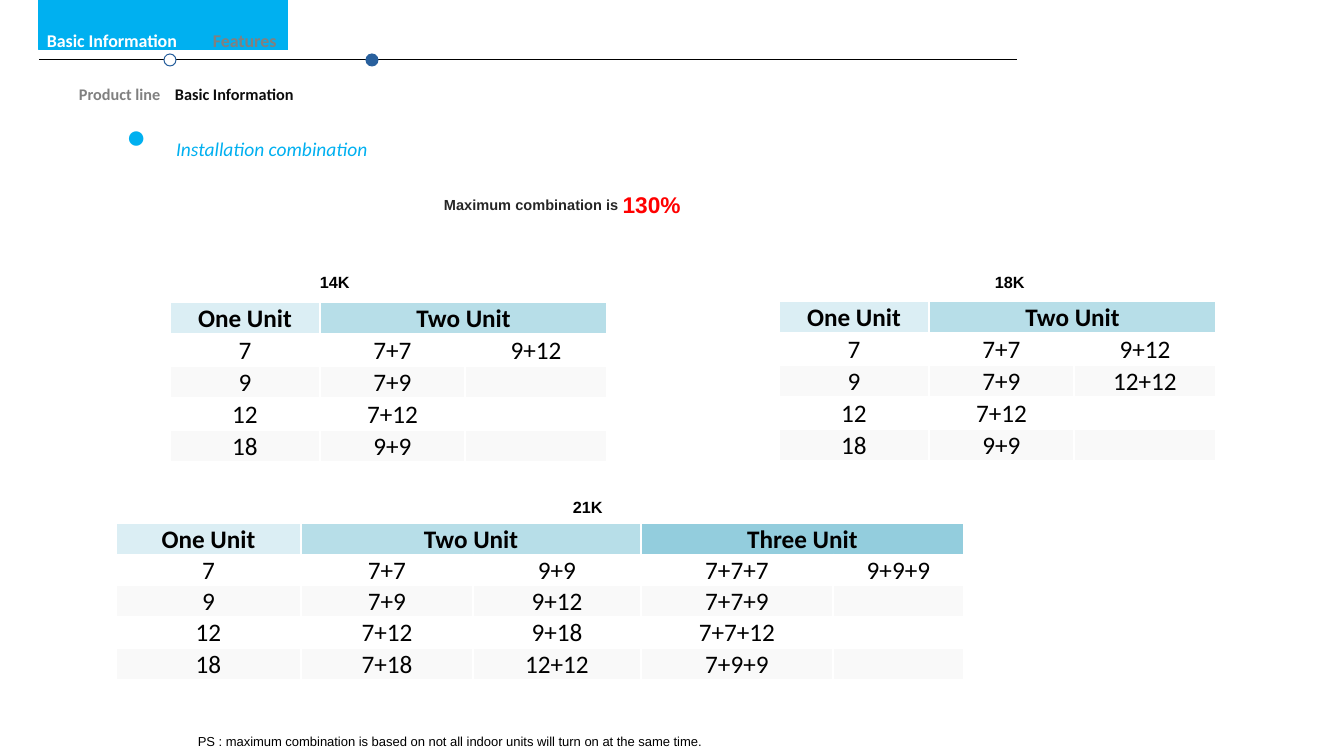
from lxml.etree import SubElement
from pptx import Presentation
from pptx.dml.color import RGBColor
from pptx.enum.shapes import MSO_CONNECTOR as Connector, MSO_SHAPE as Preset
from pptx.enum.text import MSO_ANCHOR as Anchor, MSO_AUTO_SIZE as AutoSize, PP_ALIGN as Align
from pptx.oxml.ns import qn
from pptx.util import Pt

EMU_PER_PX = 914400 / 100.8

BLACK = RGBColor(0x00, 0x00, 0x00)
NEAR_BLACK = RGBColor(0x0D, 0x0D, 0x0D)
DARK = RGBColor(0x26, 0x26, 0x26)
GREY = RGBColor(0x80, 0x80, 0x80)
WHITE = RGBColor(0xFF, 0xFF, 0xFF)
BAND = RGBColor(0xF9, 0xF9, 0xF9)
RED = RGBColor(0xFF, 0x00, 0x00)
SKY = RGBColor(0x00, 0xB0, 0xF0)
NAVY = RGBColor(0x29, 0x60, 0x9D)
HEADER_FILLS = [RGBColor(0xDB, 0xEE, 0xF4), RGBColor(0xB7, 0xDE, 0xE8), RGBColor(0x93, 0xCD, 0xDD)]

ROWS_14K = [["7", "7+7", "9+12"], ["9", "7+9", ""], ["12", "7+12", ""], ["18", "9+9", ""]]
ROWS_18K = [["7", "7+7", "9+12"], ["9", "7+9", "12+12"], ["12", "7+12", ""], ["18", "9+9", ""]]
ROWS_21K = [
    ["7", "7+7", "9+9", "7+7+7", "9+9+9"],
    ["9", "7+9", "9+12", "7+7+9", ""],
    ["12", "7+12", "9+18", "7+7+12", ""],
    ["18", "7+18", "12+12", "7+9+9", ""],
]


def px(length):
    return round(length * EMU_PER_PX)


def add_shape(page, preset, left, top, width, height, fill, line):
    shape = page.shapes.add_shape(preset, px(left), px(top), px(width), px(height))
    shape.shadow.inherit = False
    shape.fill.solid()
    shape.fill.fore_color.rgb = fill
    shape.line.color.rgb = line
    shape.line.width = Pt(0.75)


def add_rule(page, left, right, y):
    rule = page.shapes.add_connector(Connector.STRAIGHT, px(left), px(y), px(right), px(y))
    rule.line.color.rgb = BLACK
    rule.line.width = Pt(0.75)
    SubElement(rule._element.spPr, qn("a:effectLst"))


def set_tab(para, position):
    tabs = SubElement(para._p.get_or_add_pPr(), qn("a:tabLst"))
    SubElement(tabs, qn("a:tab"), pos=str(px(position)), algn="l")


def add_lowered_spans(para, spans):
    """Add (text, size, colour) runs set below the baseline, which also draws them smaller."""
    for text, size, colour in spans:
        span = para.add_run()
        span.text = text
        span.font.size = Pt(size)
        span.font.color.rgb = colour
        span._r.get_or_add_rPr().set("baseline", "-25000")


def add_label(page, left, top, width, height, spans, font="Arial", bold=True, wrap=True, tab=None):
    box = page.shapes.add_textbox(px(left), px(top), px(width), px(height))
    box.text_frame.word_wrap = wrap
    para = box.text_frame.paragraphs[0]
    if tab:
        set_tab(para, tab)
    para.font.name = font
    para.font.bold = bold
    add_lowered_spans(para, spans)


def set_bulleted_title(page, text):
    title = page.shapes.title
    title.left, title.top, title.width, title.height = px(116), px(109), px(405), px(50)
    frame = title.text_frame
    frame.word_wrap = False
    frame.auto_size = AutoSize.NONE
    frame.vertical_anchor = Anchor.TOP
    para = frame.paragraphs[0]
    para.alignment = Align.LEFT
    para.line_spacing = 1.0
    para.space_before = Pt(0)
    properties = para._p.get_or_add_pPr()
    properties.set("marL", str(px(50)))
    properties.set("indent", str(-px(50)))
    SubElement(properties, qn("a:buFont"), typeface="Arial")
    SubElement(properties, qn("a:buChar"), char="●")
    para.font.name = "Calibri"
    para.font.italic = True
    add_lowered_spans(para, [(text, 24, SKY)])


def fill_cell(cell, text, fill, bold):
    cell.fill.solid()
    cell.fill.fore_color.rgb = fill
    cell.margin_left = cell.margin_right = cell.margin_top = px(1)
    cell.margin_bottom = 0
    cell.vertical_anchor = Anchor.MIDDLE
    cell.text = text
    para = cell.text_frame.paragraphs[0]
    para.alignment = Align.CENTER
    para.font.name = "Calibri"
    para.font.size = Pt(18)
    para.font.bold = bold
    para.font.color.rgb = BLACK


def add_combinations(page, left, top, widths, row_height, rows):
    """Add a table whose header spans one column, then two columns per further heading."""
    frame = page.shapes.add_table(len(rows) + 1, len(widths), px(left), px(top),
                                  px(sum(widths)), px(row_height * (len(rows) + 1)))
    table = frame.table
    for column, width in zip(table.columns, widths):
        column.width = px(width)
    for row in table.rows:
        row.height = px(row_height)
    for index, heading in enumerate(["One Unit", "Two Unit", "Three Unit"][:len(widths) // 2 + 1]):
        first = max(0, 2 * index - 1)
        cell = table.cell(0, first)
        if index:
            cell.merge(table.cell(0, first + 1))
        fill_cell(cell, heading, HEADER_FILLS[index], True)
    for row_index, row in enumerate(rows, start=1):
        for column_index, text in enumerate(row):
            fill_cell(table.cell(row_index, column_index), text, WHITE if row_index % 2 else BAND, False)


def main():
    deck = Presentation()
    deck.slide_width, deck.slide_height = px(1344), px(756)
    page = deck.slides.add_slide(deck.slide_layouts[5])

    add_rule(page, 39, 1017, 60)
    add_label(page, 69, 61, 815, 44, [("Product line\t", 20, GREY), ("Basic Information", 20, NEAR_BLACK)],
              font="Calibri", tab=96)
    add_shape(page, Preset.OVAL, 366, 54, 12, 12, NAVY, NAVY)
    add_shape(page, Preset.OVAL, 164, 54, 12, 12, WHITE, NAVY)
    set_bulleted_title(page, "Installation combination")
    add_label(page, 434, 160, 504, 57, [("Maximum combination is ", 18, DARK), ("130%", 28, RED)])

    for name, left, top in [("14K", 310, 249), ("18K", 985, 249), ("21K", 563, 473)]:
        add_label(page, left, top, 80, 44, [(name, 20, BLACK)])
    add_combinations(page, 170, 302, [150, 145, 142], 32, ROWS_14K)
    add_combinations(page, 779, 301, [150, 145, 142], 32, ROWS_18K)
    add_combinations(page, 116, 523, [185, 172, 168, 192, 131], 31, ROWS_21K)
    add_label(page, 188, 714, 898, 37,
              [("PS : maximum combination is based on not all indoor units will turn on at the same time.",
                16, BLACK)], bold=False, wrap=False)

    add_shape(page, Preset.FLOWCHART_PROCESS, 39, 0, 249, 50, SKY, SKY)
    add_label(page, 37, 4, 979, 48, [("Basic Information\t", 22, WHITE), ("Features", 22, GREY)],
              font="Calibri", tab=166)
    deck.save("out.pptx")


if __name__ == "__main__":
    main()
